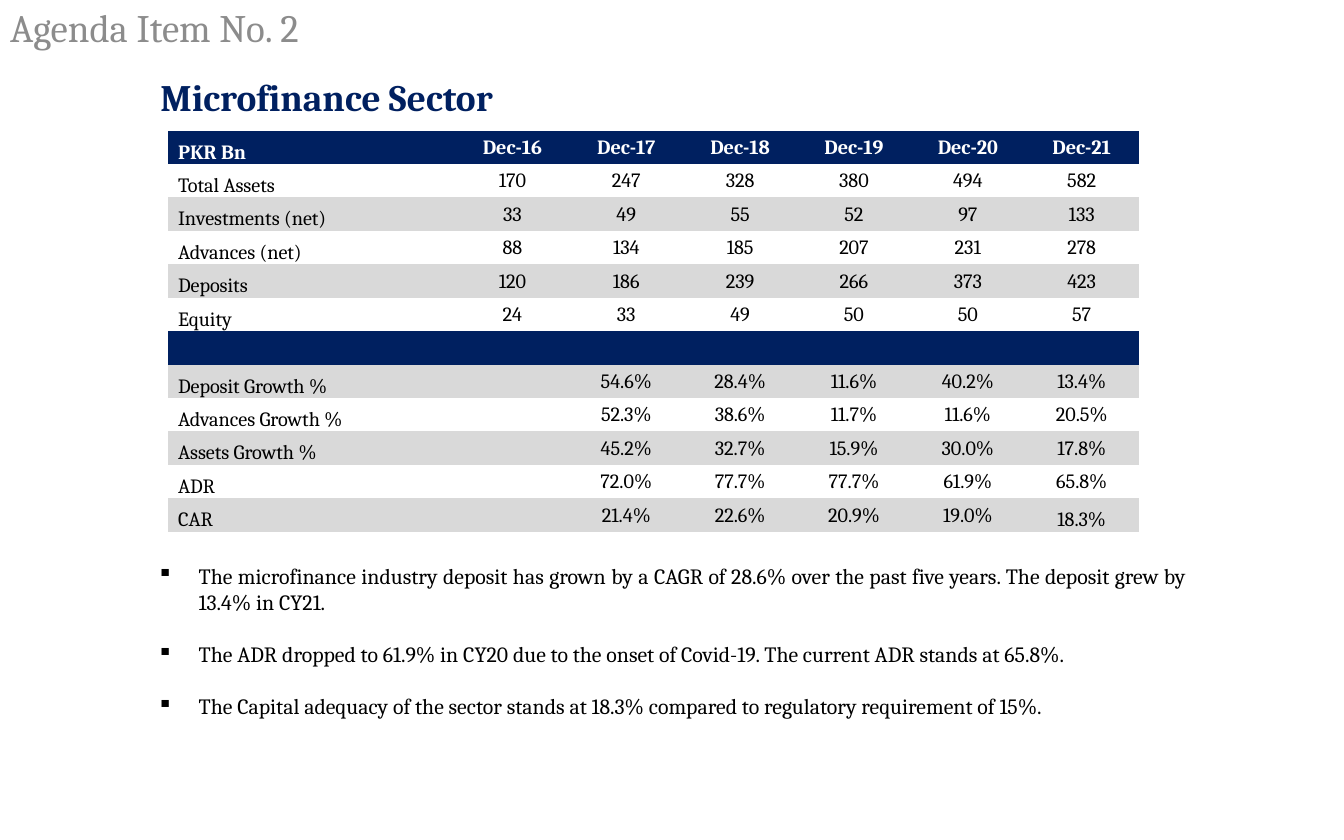
from lxml import etree
from pptx import Presentation
from pptx.dml.color import RGBColor
from pptx.enum.text import MSO_ANCHOR, PP_ALIGN
from pptx.oxml.ns import qn
from pptx.util import Inches, Pt

LEFT, CENTER, JUSTIFY = PP_ALIGN.LEFT, PP_ALIGN.CENTER, PP_ALIGN.JUSTIFY
MIDDLE, BOTTOM = MSO_ANCHOR.MIDDLE, MSO_ANCHOR.BOTTOM
NO_GRID_STYLE = "{2D5ABB26-0587-4C30-8999-92F81FD0307C}"
NAVY, GRAY, BAND, WHITE, BLACK = "002060", "8C8C8C", "D9D9D9", "FFFFFF", "000000"
GRID_COLUMNS, GRID_ROWS = 72, 45

HEADER = ["PKR Bn", "Dec-16", "Dec-17", "Dec-18", "Dec-19", "Dec-20", "Dec-21"]
BALANCES = [
    ["Total Assets", "170", "247", "328", "380", "494", "582"],
    ["Investments (net)", "33", "49", "55", "52", "97", "133"],
    ["Advances (net)", "88", "134", "185", "207", "231", "278"],
    ["Deposits", "120", "186", "239", "266", "373", "423"],
    ["Equity", "24", "33", "49", "50", "50", "57"],
]
RATIOS = [
    ["Deposit Growth %", "", "54.6%", "28.4%", "11.6%", "40.2%", "13.4%"],
    ["Advances Growth %", "", "52.3%", "38.6%", "11.7%", "11.6%", "20.5%"],
    ["Assets Growth %", "", "45.2%", "32.7%", "15.9%", "30.0%", "17.8%"],
    ["ADR", "", "72.0%", "77.7%", "77.7%", "61.9%", "65.8%"],
    ["CAR", "", "21.4%", "22.6%", "20.9%", "19.0%", "18.3%"],
]
FINDINGS = [
    "The microfinance industry deposit has grown by a CAGR of 28.6% over the past "
    "five years. The deposit grew by 13.4% in CY21.",
    "The ADR dropped to 61.9% in CY20 due to the onset of Covid-19. "
    "The current ADR stands at 65.8%.",
    "The Capital adequacy of the sector stands at 18.3% compared to regulatory "
    "requirement of 15%.",
]


def color(value):
    return RGBColor.from_string(value)


class SlideBuilder:
    font_name = "Cambria"

    def __init__(self, deck):
        self.slide = deck.slides.add_slide(deck.slide_layouts[5])
        self.column = deck.slide_width / GRID_COLUMNS
        self.row = deck.slide_height / GRID_ROWS

    def area(self, left, top, width, height):
        return (round(left * self.column), round(top * self.row),
                round(width * self.column), round(height * self.row))

    def style(self, para, size, tone, bold=False, align=LEFT):
        para.alignment = align
        for span in para.runs:
            span.font.name = self.font_name
            span.font.size = Pt(size)
            span.font.bold = bold
            span.font.color.rgb = color(tone)

    def title(self, text, place, size, tone):
        box = self.slide.shapes.title
        box.left, box.top, box.width, box.height = self.area(*place)
        box.text_frame.text = text
        box.text_frame.vertical_anchor = MIDDLE
        para = box.text_frame.paragraphs[0]
        para.line_spacing = 0.9
        self.style(para, size, tone)

    def heading(self, text, place, size, tone):
        frame = self.slide.shapes.add_textbox(*self.area(*place)).text_frame
        frame.word_wrap = True
        frame.vertical_anchor = MIDDLE
        frame.text = text
        self.style(frame.paragraphs[0], size, tone, bold=True)

    def bullets(self, items, place, size, tone):
        frame = self.slide.shapes.add_textbox(*self.area(*place)).text_frame
        frame.word_wrap = True
        frame.margin_left = frame.margin_right = Inches(0.07)
        frame.margin_top = frame.margin_bottom = Inches(0.04)
        frame.text = "\n".join(items)
        for index, para in enumerate(frame.paragraphs):
            properties = para._p.get_or_add_pPr()
            properties.set("marL", str(Inches(0.37)))
            properties.set("indent", str(-Inches(0.37)))
            etree.SubElement(properties, qn("a:buChar"), char="▪")
            if index:
                para.space_before = Pt(16.7)
            self.style(para, size, tone, align=JUSTIFY)

    def table(self, rows, place, widths, size):
        """Each row is (texts, fill, text color, bold)."""
        frame = self.slide.shapes.add_table(len(rows), len(widths), *self.area(*place))
        for style_id in frame.element.iter(qn("a:tableStyleId")):
            style_id.text = NO_GRID_STYLE
        table = frame.table
        table.first_row = table.horz_banding = False
        for column, width in zip(table.columns, widths):
            column.width = round(width * self.column)
        for row_index, (texts, fill, tone, bold) in enumerate(rows):
            for column_index, text in enumerate(texts):
                cell = table.cell(row_index, column_index)
                cell.fill.solid()
                cell.fill.fore_color.rgb = color(fill)
                is_label = column_index == 0
                cell.margin_left = Inches(0.09 if is_label else 0.01)
                cell.margin_top = cell.margin_right = Inches(0.01)
                cell.margin_bottom = 0
                cell.vertical_anchor = BOTTOM if is_label else MIDDLE
                cell.text = text
                para = cell.text_frame.paragraphs[0]
                self.style(para, size, tone, bold, LEFT if is_label else CENTER)
                if not text:  # keeps an empty cell from stretching its row
                    etree.SubElement(para._p, qn("a:endParaRPr"), sz=str(size * 100))
        return table


def banded(rows, fills):
    return [(texts, fills[index % 2], BLACK, False) for index, texts in enumerate(rows)]


def main():
    deck = Presentation()
    deck.slide_width, deck.slide_height = Inches(12), Inches(7.5)
    page = SlideBuilder(deck)

    # Title and heading
    page.title("Agenda Item No. 2", (-0.06, 0.06, 19.25, 3.05), 25, GRAY)
    page.heading("Microfinance Sector", (8, 3.4, 23.75, 3.6), 24, NAVY)

    # Sector figures: balances, a divider row, then ratios
    rows = [(HEADER, NAVY, WHITE, True)]
    rows += banded(BALANCES, (WHITE, BAND))
    rows += [([""] * len(HEADER), NAVY, WHITE, False)]
    rows += banded(RATIOS, (BAND, WHITE))
    table = page.table(rows, (9, 7, 52, 21.5), [15.4] + [6.1] * 6, 13)
    table.cell(len(rows) - 1, len(HEADER) - 1).vertical_anchor = BOTTOM

    # Findings
    page.bullets(FINDINGS, (8, 29.9, 56, 8.95), 14, BLACK)

    deck.save("out.pptx")


if __name__ == "__main__":
    main()
